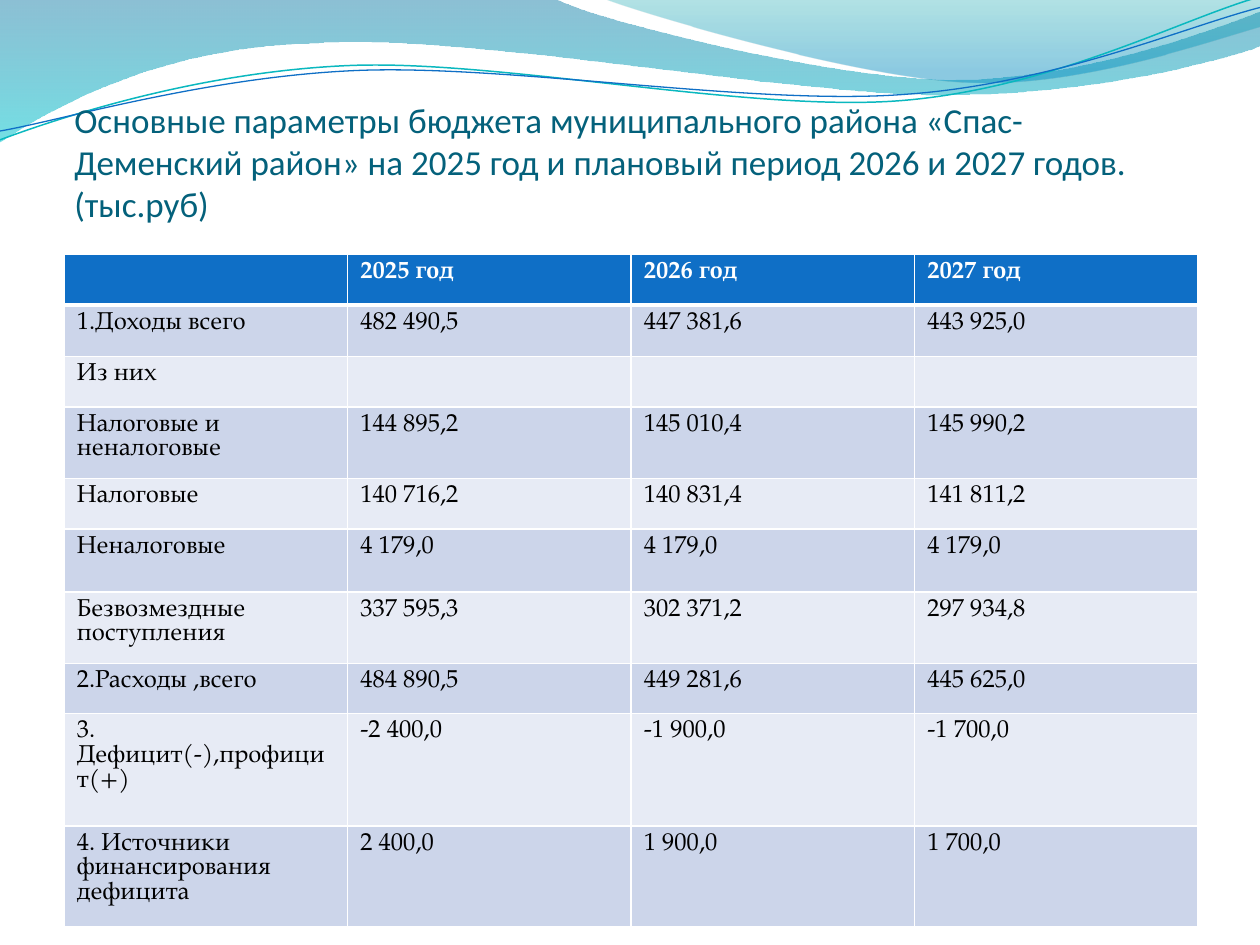
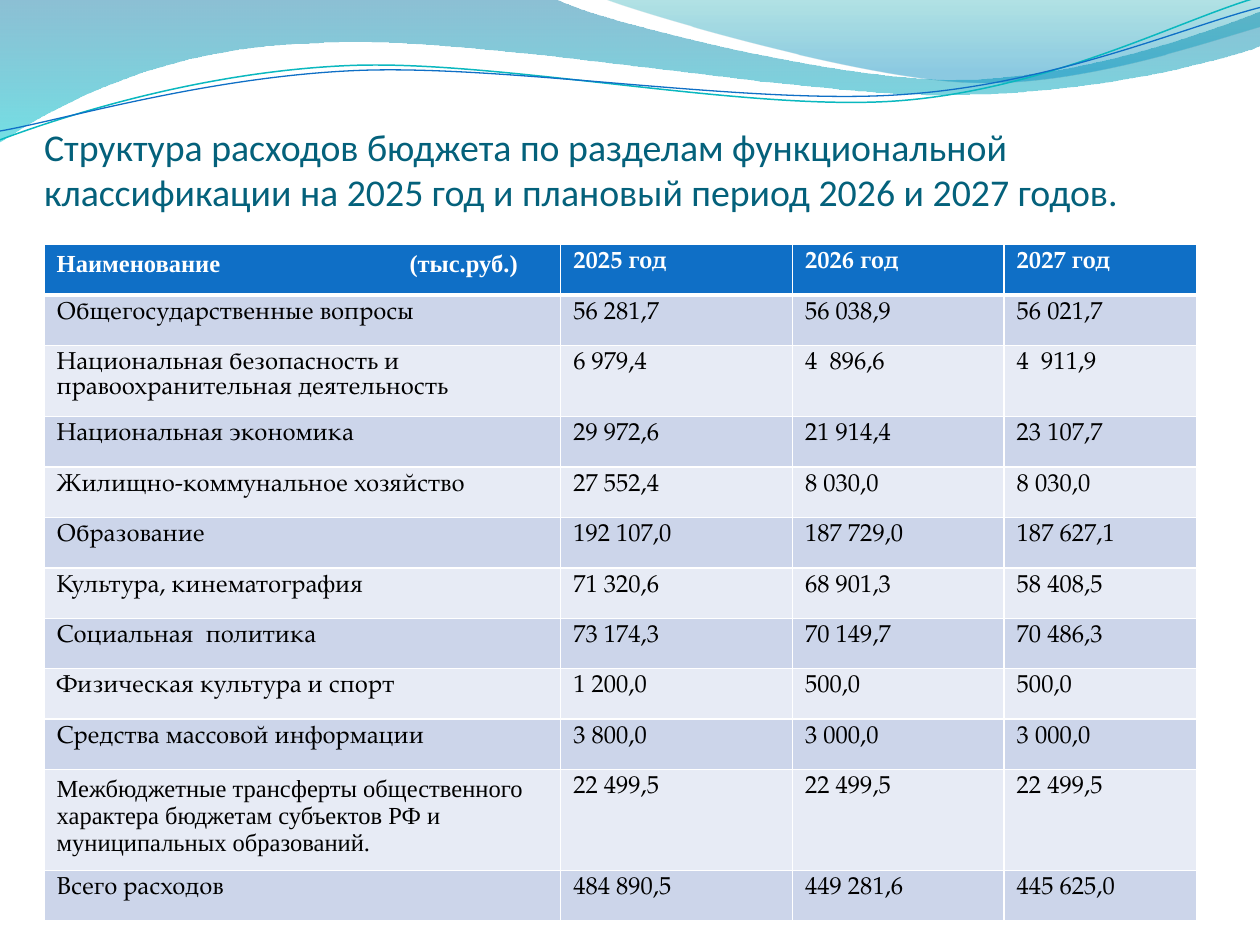
import math
from dataclasses import dataclass

from lxml import etree
from pptx import Presentation, util as u
from pptx.dml.color import RGBColor
from pptx.enum import text
from pptx.oxml.ns import qn


@dataclass(frozen=True)
class Theme:
    title: str = "04617B"
    head: str = "0F6FC6"
    odd: str = "CCD5EA"
    even: str = "E7EBF5"
    ink: str = "000000"
    white: str = "FFFFFF"
    teal: str = "0AB8BF"
    sans: str = "Calibri"
    body: str = "TeX Gyre Pagella"
    serif: str = "Times New Roman"
    size: float = 14
    thin: float = 1
    thick: float = 3
    tilt: float = 2.7


T = Theme()

BAND = [(0, 0), (4.4, -0.01),
        (4.76, 0.17, 6.64, 0.63, 7.58, 0.63), (8.53, 0.63, 9.58, 0.26, 10, 0.09),
        (10.01, 0.36),
        (9.83, 0.44, 8.7, 0.76, 7.46, 0.75), (6.22, 0.75, 3.82, 0.28, 2.57, 0.34),
        (1.29, 0.36, 0.46, 0.83, -0.01, 1.13), (0, 0)]
CREST = [(4.79, -0.01),
         (5.09, 0.11, 6.82, 0.62, 7.69, 0.65), (8.56, 0.69, 9.61, 0.32, 10, 0.21),
         (10, 0), (4.79, -0.01)]
WAVES = [
    (T.teal, 0.85, (4.99, 0.58),
     [(0, 1.11), (0.48, 0.93, 1.58, 0.57, 2.77, 0.52),
      (3.95, 0.47, 5.93, 0.89, 7.13, 0.8), (8.33, 0.71, 9.38, 0.15, 9.98, -0.02)]),
    (T.head, 0.75, (5, 0.59),
     [(0, 1.04), (0.47, 0.96, 1.64, 0.61, 2.83, 0.56),
      (4.03, 0.51, 5.97, 0.84, 7.17, 0.75), (8.36, 0.67, 9.41, 0.21, 10, 0.06)]),
]

YEARS = ["2025 год", "2026 год", "2027 год"]
TOTALS = [
    ["", *YEARS],
    ["1.Доходы всего", "482 490,5", "447 381,6", "443 925,0"],
    ["Из них", "", "", ""],
    ["Налоговые и неналоговые", "144 895,2", "145 010,4", "145 990,2"],
    ["Налоговые", "140 716,2", "140 831,4", "141 811,2"],
    ["Неналоговые", "4 179,0", "4 179,0", "4 179,0"],
    ["Безвозмездные поступления", "337 595,3", "302 371,2", "297 934,8"],
    ["2.Расходы ,всего", "484 890,5", "449 281,6", "445 625,0"],
    ["3. Дефицит(-),профицит(+)", "-2 400,0", "-1 900,0", "-1 700,0"],
    ["4. Источники финансирования дефицита", "2 400,0", "1 900,0", "1 700,0"],
]
UNIT = "Наименование\t(тыс.руб.)"
GRANTS = ("Межбюджетные трансферты общественного характера бюджетам "
          "субъектов РФ и муниципальных образований.")
COSTS = [
    [UNIT, *YEARS],
    ["Общегосударственные вопросы", "56 281,7", "56 038,9", "56 021,7"],
    ["Национальная безопасность и правоохранительная деятельность",
     "6 979,4", "4  896,6", "4  911,9"],
    ["Национальная экономика", "29 972,6", "21 914,4", "23 107,7"],
    ["Жилищно-коммунальное хозяйство", "27 552,4", "8 030,0", "8 030,0"],
    ["Образование", "192 107,0", "187 729,0", "187 627,1"],
    ["Культура, кинематография", "71 320,6", "68 901,3", "58 408,5"],
    ["Социальная  политика", "73 174,3", "70 149,7", "70 486,3"],
    ["Физическая культура и спорт", "1 200,0", "500,0", "500,0"],
    ["Средства массовой информации", "3 800,0", "3 000,0", "3 000,0"],
    [GRANTS, "22 499,5", "22 499,5", "22 499,5"],
    ["Всего расходов", "484 890,5", "449 281,6", "445 625,0"],
]


def add_run(para, words, font, size, color, bold=False):
    run = para.add_run()
    run.text = words
    run.font.name = font
    run.font.size = u.Pt(size)
    run.font.bold = bold
    run.font.color.rgb = RGBColor.from_string(color)


def pairs(part):
    return list(zip(part[::2], part[1::2]))


def turn(part, hub):
    sin, cos = math.sin(math.radians(T.tilt)), math.cos(math.radians(T.tilt))
    spots = []
    for x, y in pairs(part):
        dx, dy = x - hub[0], y - hub[1]
        spots += [hub[0] + dx * cos - dy * sin, hub[1] + dx * sin + dy * cos]
    return tuple(spots)


def bend(shape, parts):
    lines = iter(list(shape.element.iter(qn("a:lnTo"))))
    for part in parts[1:]:
        group = [next(lines) for _ in pairs(part)]
        if len(group) == 3:
            curve = etree.Element(qn("a:cubicBezTo"))
            group[0].addprevious(curve)
            for line in group:
                curve.append(line[0])
                line.getparent().remove(line)


def add_path(slide, parts, close):
    first, *rest = [(u.Inches(x), u.Inches(y)) for part in parts for x, y in pairs(part)]
    pen = slide.shapes.build_freeform(*first)
    pen.add_line_segments(rest, close=close)
    shape = pen.convert_to_shape()
    bend(shape, parts)
    shape.shadow.inherit = False
    return shape


def add_band(slide, parts, stops):
    shape = add_path(slide, parts, True)
    shape.line.fill.background()
    shape.fill.gradient()
    shape.fill.gradient_angle = 270
    for stop, (place, color, _) in zip(shape.fill.gradient_stops, stops):
        stop.position = place
        stop.color.rgb = RGBColor.from_string(color)
    tints = shape.element.spPr.iter(qn("a:srgbClr"))
    for tint, (_, _, alpha) in zip(tints, stops):
        etree.SubElement(tint, qn("a:alpha"), val=str(alpha * 1000))


def add_wave(slide, color, width, hub, parts):
    shape = add_path(slide, [turn(part, hub) for part in parts], False)
    shape.rotation = -T.tilt
    shape.fill.background()
    shape.line.color.rgb = RGBColor.from_string(color)
    shape.line.width = u.Pt(width)


def add_title(slide, words, size, box):
    frame = slide.shapes.add_textbox(*map(u.Inches, box)).text_frame
    frame.word_wrap = True
    frame.vertical_anchor = text.MSO_ANCHOR.BOTTOM
    frame.margin_left = frame.margin_right = frame.margin_bottom = 0
    frame.margin_top = u.Inches(0.05)
    add_run(frame.paragraphs[0], words, T.sans, size, T.title)


def add_edge(cell, side, width):
    props = cell._tc.get_or_add_tcPr()
    line = etree.SubElement(props, qn(f"a:ln{side}"), w=str(u.Pt(width)))
    fill = etree.SubElement(line, qn("a:solidFill"))
    etree.SubElement(fill, qn("a:srgbClr"), val=T.white)


def add_tab(para, place):
    tabs = etree.SubElement(para._p.get_or_add_pPr(), qn("a:tabLst"))
    etree.SubElement(tabs, qn("a:tab"), pos=str(u.Inches(place)), algn="l")


def end_para(para, font):
    end = etree.SubElement(para._p, qn("a:endParaRPr"), sz=str(T.size * 100))
    etree.SubElement(end, qn("a:latin"), typeface=font)


def fill_cell(cell, words, row):
    head = row == 0
    add_edge(cell, "L", T.thin)
    add_edge(cell, "R", T.thin)
    add_edge(cell, "T", T.thick if row == 1 else T.thin)
    add_edge(cell, "B", T.thick if head else T.thin)
    cell.fill.solid()
    shade = T.head if head else (T.even, T.odd)[row % 2]
    cell.fill.fore_color.rgb = RGBColor.from_string(shade)
    para = cell.text_frame.paragraphs[0]
    font = T.serif if words in (UNIT, GRANTS) else T.body
    if "\t" in words:
        add_tab(para, 2.8)
    if words:
        add_run(para, words, font, T.size, T.white if head else T.ink, head)
    end_para(para, font)


def add_grid(slide, data, left, top, cols, rows):
    box = map(u.Inches, (left, top, sum(cols), sum(rows)))
    grid = slide.shapes.add_table(len(rows), len(cols), *box).table
    for col, width in zip(grid.columns, cols):
        col.width = u.Inches(width)
    for row, height in zip(grid.rows, rows):
        row.height = u.Inches(height)
    for r, line in enumerate(data):
        for c, words in enumerate(line):
            fill_cell(grid.cell(r, c), words, r)


def add_page(deck):
    slide = deck.slides.add_slide(deck.slide_layouts[6])
    add_band(slide, BAND, [(0, "0074A1", 45), (1, "00C6CF", 55)])
    add_band(slide, CREST, [(0, "00A1A9", 30), (0.8, "008BBF", 45)])
    for wave in WAVES:
        add_wave(slide, *wave)
    return slide


def main():
    deck = Presentation()
    deck.slide_width, deck.slide_height = u.Inches(10), u.Inches(7.5)

    page = add_page(deck)
    add_title(page, "Основные параметры бюджета муниципального района "
              "«Спас-Деменский район» на 2025 год и плановый период "
              "2026 и 2027 годов. (тыс.руб)", 20, (0.59, 0.6, 8.74, 1.18))
    add_grid(page, TOTALS, 0.51, 2.02, [2.25] * 4,
             [0.4, 0.41, 0.4, 0.5, 0.4, 0.5, 0.5, 0.4, 0.89, 0.69])

    page = add_page(deck)
    add_title(page, "Структура расходов бюджета по разделам функциональной "
              "классификации на 2025 год и плановый период "
              "2026 и 2027 годов.", 21.6, (0.35, 0.6, 9.15, 1.1))
    add_grid(page, COSTS, 0.35, 1.94, [4.1, 1.84, 1.68, 1.53],
             [0.4, 0.4, 0.56] + [0.4] * 7 + [0.79, 0.4])

    deck.save("out.pptx")


if __name__ == "__main__":
    main()
